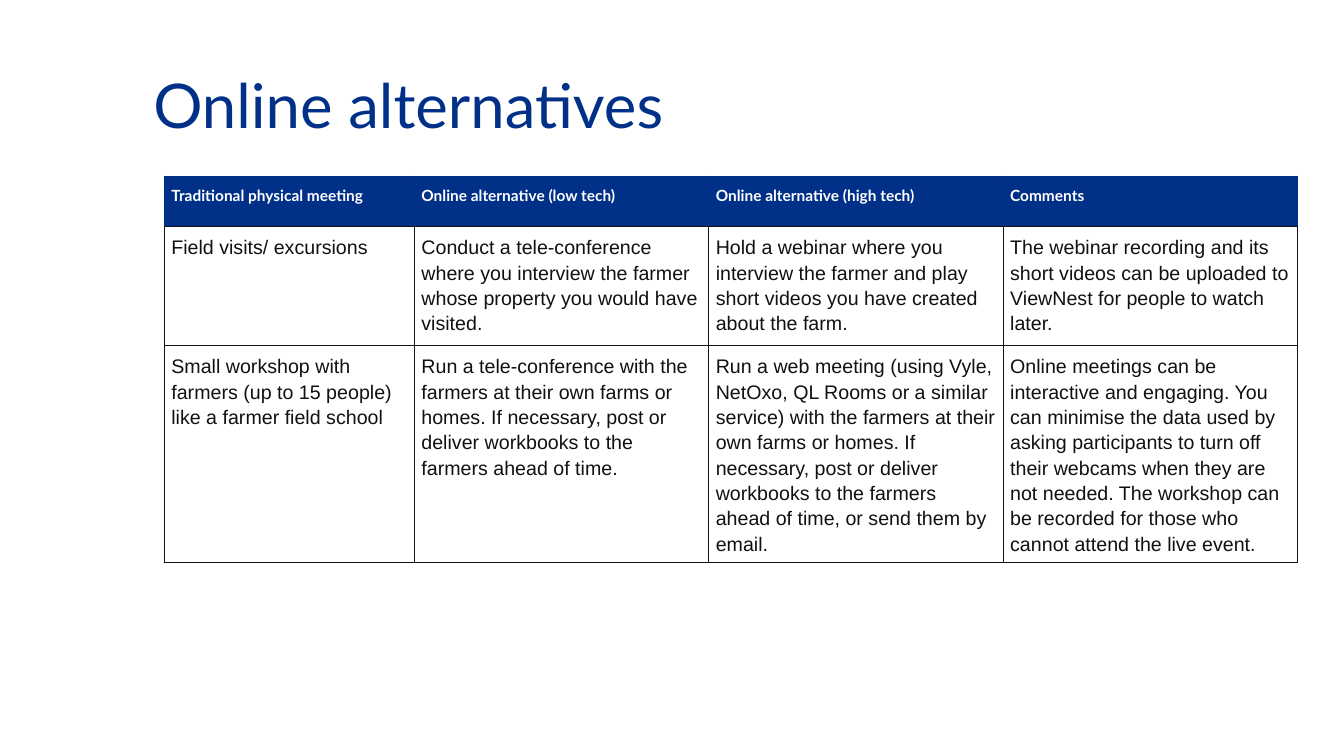
from lxml.etree import SubElement
from pptx import Presentation
from pptx.dml.color import RGBColor
from pptx.enum.text import MSO_ANCHOR, PP_ALIGN
from pptx.oxml.ns import qn
from pptx.util import Inches, Pt

NAVY = RGBColor(0x00, 0x30, 0x87)
HEADER_EDGE = RGBColor(0x00, 0x2F, 0x84)
INK = RGBColor(0x11, 0x11, 0x11)
WHITE = RGBColor(0xFF, 0xFF, 0xFF)

COLUMN_WIDTHS = [2.48, 2.92, 2.92, 2.92]
ROW_HEIGHTS = [0.5, 1.18, 1.88]
ALTERNATIVES = [
    ["Traditional physical meeting", "Online alternative (low tech)",
     "Online alternative (high tech)", "Comments"],
    ["Field visits/ excursions",
     "Conduct a tele-conference where you interview the farmer whose property "
     "you would have visited.",
     "Hold a webinar where you interview the farmer and play short videos you "
     "have created about the farm.",
     "The webinar recording and its short videos can be uploaded to ViewNest "
     "for people to watch later."],
    ["Small workshop with farmers (up to 15 people) like a farmer field school",
     "Run a tele-conference with the farmers at their own farms or homes. If "
     "necessary, post or deliver workbooks to the farmers ahead of time.",
     "Run a web meeting (using Vyle, NetOxo, QL Rooms or a similar service) "
     "with the farmers at their own farms or homes. If necessary, post or "
     "deliver workbooks to the farmers ahead of time, or send them by email.",
     "Online meetings can be interactive and engaging. You can minimise the "
     "data used by asking participants to turn off their webcams when they are "
     "not needed. The workshop can be recorded for those who cannot attend the "
     "live event."],
]


def add_border(cell, side, color, width):
    line = SubElement(cell._tc.get_or_add_tcPr(), qn(f"a:{side}"), w=str(Pt(width)))
    fill = SubElement(line, qn("a:solidFill"))
    SubElement(fill, qn("a:srgbClr"), val=str(color))


prs = Presentation()
prs.slide_width = Inches(13.33)
prs.slide_height = Inches(7.5)
slide = prs.slides.add_slide(prs.slide_layouts[5])

# Title
title = slide.shapes.title
title.left, title.top = Inches(1.42), Inches(0.52)
title.width, title.height = Inches(11.25), Inches(1.03)
title.text_frame.vertical_anchor = MSO_ANCHOR.MIDDLE
heading = title.text_frame.paragraphs[0]
heading.alignment = PP_ALIGN.LEFT
heading_run = heading.add_run()
heading_run.text = "Online alternatives"
heading_run.font.name = "Lato"
heading_run.font.size = Pt(44)
heading_run.font.color.rgb = NAVY

# Table grid
table = slide.shapes.add_table(
    len(ROW_HEIGHTS), len(COLUMN_WIDTHS), Inches(1.63), Inches(1.75),
    Inches(sum(COLUMN_WIDTHS)), Inches(sum(ROW_HEIGHTS))).table
table.horz_banding = False
for column, width in zip(table.columns, COLUMN_WIDTHS):
    column.width = Inches(width)
for row, height in zip(table.rows, ROW_HEIGHTS):
    row.height = Inches(height)

# Cells: navy header row, white body rows
for row_index, row_texts in enumerate(ALTERNATIVES):
    is_header = row_index == 0
    for column_index, text in enumerate(row_texts):
        cell = table.cell(row_index, column_index)
        cell.margin_left = cell.margin_right = Inches(0.07)
        cell.margin_top = cell.margin_bottom = Inches(0.07)
        cell.vertical_anchor = MSO_ANCHOR.TOP

        paragraph = cell.text_frame.paragraphs[0]
        paragraph.line_spacing = 1.15
        if not is_header:
            paragraph.space_after = Pt(6)
        run = paragraph.add_run()
        run.text = text
        run.font.name = "Lato" if is_header else "Arial"
        run.font.size = Pt(11 if is_header else 14)
        run.font.bold = is_header
        run.font.color.rgb = WHITE if is_header else INK

        # Borders come before the fill in the cell properties
        for side in ("lnL", "lnR", "lnT", "lnB"):
            if is_header and side != "lnB":
                add_border(cell, side, HEADER_EDGE, 0.75)
            else:
                add_border(cell, side, INK, 1)
        cell.fill.solid()
        cell.fill.fore_color.rgb = NAVY if is_header else WHITE

prs.save("out.pptx")
